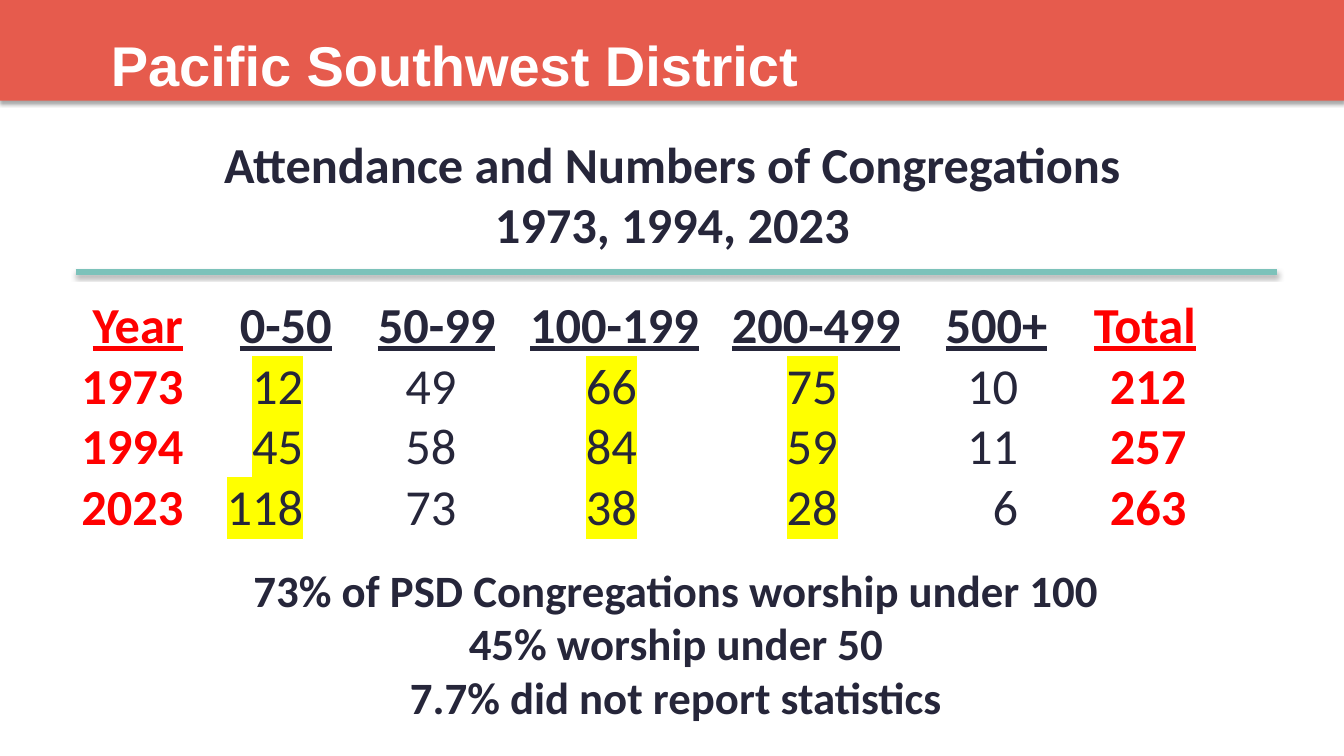
"""Build the slide on attendance in the Pacific Southwest District."""
from dataclasses import dataclass
from typing import Any

from lxml.etree import SubElement
from pptx import Presentation
from pptx.dml.color import RGBColor
from pptx.enum.shapes import MSO_CONNECTOR as Connector, MSO_SHAPE as Shape
from pptx.enum.text import MSO_AUTO_SIZE as AutoSize, PP_ALIGN as Align
from pptx.oxml.ns import qn
from pptx.util import Inches, Pt

INK, RED, WHITE = "26263A", "FF0000", "FFFFFF"
CORAL, TEAL, YELLOW = "E65B4D", "7CC2BA", "FFFF00"
HEADER_STOPS = (0.11, 1.57, 2.94, 4.45, 6.45, 8.57, 10.04)
COUNT_STOPS = (2.2, 3.72, 5.51, 7.5, 9.29, 10.96)
HIGHLIGHTED_COLUMNS = (0, 2, 3)


@dataclass
class Span:
    text: str
    color: str = INK
    bold: bool = True
    underline: bool = False
    highlight: str = ""


@dataclass
class Line:
    spans: list[Span]
    stops: tuple[float, ...] = ()
    stop_align: str = "l"


@dataclass
class TextBlock:
    at: tuple[float, float, float, float]
    lines: list[Line]
    size: int
    font: str = "Calibri"
    align: Any = Align.CENTER
    wrap: bool = True


def rgb(color: str) -> RGBColor:
    return RGBColor.from_string(color)


def add_color(parent: Any, color: str) -> Any:
    return SubElement(parent, qn("a:srgbClr"), val=color)


def add_shadow(item: Any, alpha: int, distance: int) -> None:
    effects = SubElement(item._element.spPr, qn("a:effectLst"))
    shadow = SubElement(effects, qn("a:outerShdw"), blurRad="40000",
                        dist=str(distance), dir="5400000", rotWithShape="0")
    SubElement(add_color(shadow, "000000"), qn("a:alpha"), val=str(alpha))


def add_stops(para: Any, line: Line) -> None:
    stops = SubElement(para._p.get_or_add_pPr(), qn("a:tabLst"))
    for stop in line.stops:
        SubElement(stops, qn("a:tab"), pos=str(Inches(stop)), algn=line.stop_align)


def add_span(para: Any, span: Span, block: TextBlock) -> None:
    run = para.add_run()
    run.text = span.text
    formats = {"name": block.font, "size": Pt(block.size),
               "bold": span.bold, "underline": span.underline}
    for name, value in formats.items():
        setattr(run.font, name, value)
    run.font.color.rgb = rgb(span.color)
    if span.highlight:
        properties = run.font._element
        highlight = SubElement(properties, qn("a:highlight"))
        add_color(highlight, span.highlight)
        properties.find(qn("a:solidFill")).addnext(highlight)


def add_block(page: Any, block: TextBlock) -> None:
    box = page.shapes.add_textbox(*map(Inches, block.at))
    frame = box.text_frame
    frame.word_wrap = block.wrap
    frame.auto_size = AutoSize.SHAPE_TO_FIT_TEXT
    for index, line in enumerate(block.lines):
        para = frame.add_paragraph() if index else frame.paragraphs[0]
        para.alignment = block.align
        if line.stops:
            add_stops(para, line)
        for span in line.spans:
            add_span(para, span, block)


def plain_lines(*texts: str, color: str = INK) -> list[Line]:
    return [Line([Span(text, color)]) for text in texts]


def header_line() -> Line:
    ranges = "\t".join(("0-50", "50-99", "100-199", "200-499", "500+"))
    return Line([Span("\t"), Span("Year", RED, underline=True),
                 Span("\t"), Span(ranges, underline=True),
                 Span("\t"), Span("Total", RED, underline=True)], HEADER_STOPS)


def year_line(year: int, counts: tuple[int, ...], total: int) -> Line:
    spans = [Span(str(year), RED)]
    for column, count in enumerate(counts):
        marker = YELLOW if column in HIGHLIGHTED_COLUMNS else ""
        spans += [Span("\t", bold=False),
                  Span(str(count), bold=False, highlight=marker)]
    spans += [Span("\t", bold=False), Span(str(total), RED)]
    return Line(spans, COUNT_STOPS, "r")


def main() -> None:
    deck = Presentation()
    deck.slide_width, deck.slide_height = Inches(13.33), Inches(7.5)
    page = deck.slides.add_slide(deck.slide_layouts[6])

    banner = page.shapes.add_shape(Shape.RECTANGLE, 0, 0, deck.slide_width, Inches(1))
    banner.fill.solid()
    banner.fill.fore_color.rgb = rgb(CORAL)
    banner.line.fill.background()
    add_shadow(banner, 35000, 23000)

    attendance = [
        header_line(),
        year_line(1973, (12, 49, 66, 75, 10), 212),
        year_line(1994, (45, 58, 84, 59, 11), 257),
        year_line(2023, (118, 73, 38, 28, 6), 263),
    ]
    blocks = [
        TextBlock((1, 0.25, 7.09, 0.77),
                  plain_lines("Pacific Southwest District", color=WHITE),
                  40, "Arial", Align.LEFT, False),
        TextBlock((0.71, 2.86, 12, 2.52), attendance, 36, align=Align.LEFT),
        TextBlock((1.54, 1.27, 10.26, 1.31),
                  plain_lines("Attendance and Numbers of Congregations",
                              "1973, 1994, 2023"), 36),
        TextBlock((2.04, 5.53, 9.33, 1.72),
                  plain_lines("73% of PSD Congregations worship under 100",
                              "45% worship under 50",
                              "7.7% did not report statistics"), 32),
    ]
    for block in blocks:
        add_block(page, block)

    divider = page.shapes.add_connector(
        Connector.STRAIGHT, *map(Inches, (0.75, 2.7, 12.67, 2.7)))
    divider.line.color.rgb = rgb(TEAL)
    divider.line.width = Pt(4)
    add_shadow(divider, 38000, 20000)

    deck.save("out.pptx")


if __name__ == "__main__":
    main()
